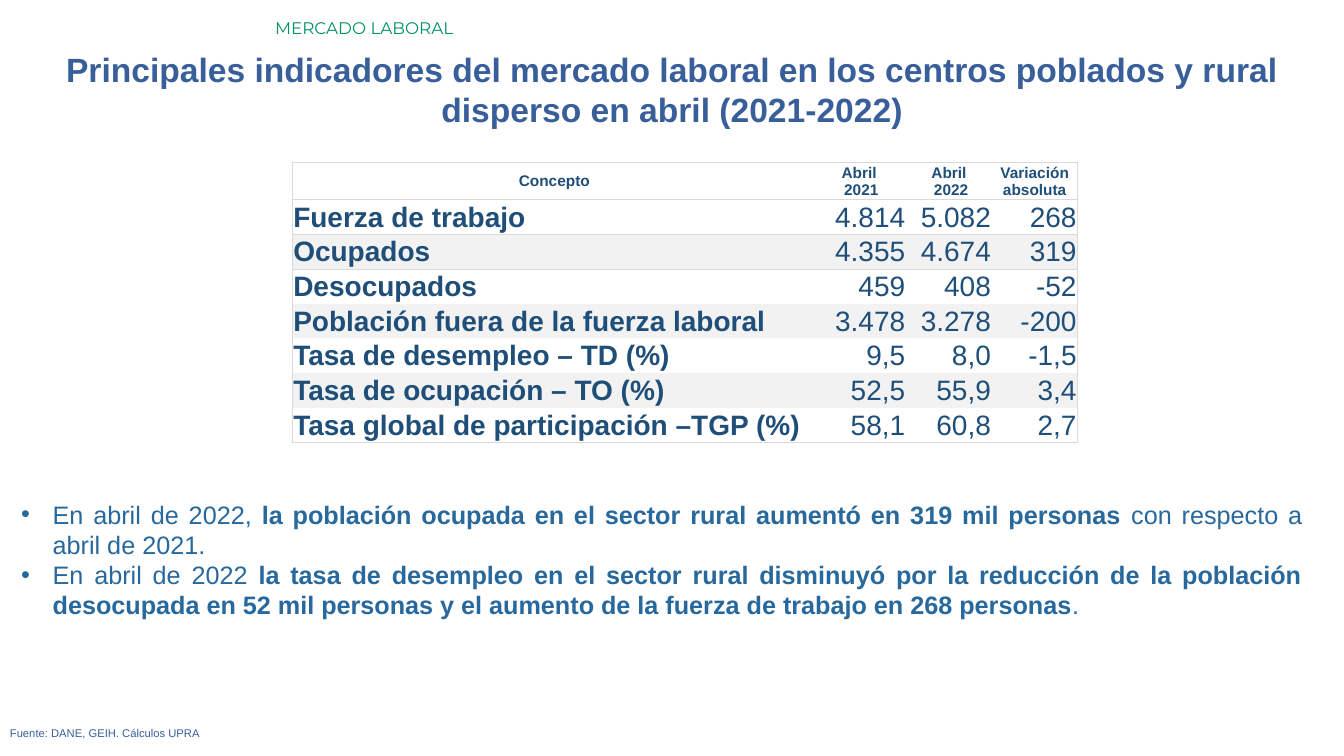
import lxml.etree
import pptx
import pptx.dml.color
import pptx.enum.text
import pptx.oxml
import pptx.oxml.ns
import pptx.util

Pt = pptx.util.Pt
Align = pptx.enum.text.PP_ALIGN
Anchor = pptx.enum.text.MSO_ANCHOR
qn = pptx.oxml.ns.qn

COLORS = {
    "green": "009267",
    "title": "395F9B",
    "body": "27689D",
    "table": "1F4E78",
    "border": "D9D9D9",
    "band": "F2F2F2",
    "white": "FFFFFF",
}


def write(paragraph, runs, color, size, alignment, font="Arial"):
    paragraph.alignment = alignment
    paragraph.space_before = Pt(0)
    for text, bold in runs:
        run = paragraph.add_run()
        run.text = text
        values = {"name": font, "size": Pt(size), "bold": bold}
        for name, value in values.items():
            setattr(run.font, name, value)
        run.font.color.rgb = pptx.dml.color.RGBColor.from_string(COLORS[color])


def place(shape, left, top, width, height, anchor=Anchor.TOP):
    position = {"left": left, "top": top, "width": width, "height": height}
    for name, value in position.items():
        setattr(shape, name, Pt(value))
    frame_format = {
        "word_wrap": True,
        "auto_size": pptx.enum.text.MSO_AUTO_SIZE.NONE,
        "vertical_anchor": anchor,
    }
    for name, value in frame_format.items():
        setattr(shape.text_frame, name, value)
    return shape.text_frame


presentation = pptx.Presentation()
presentation.slide_width = Pt(960)
presentation.slide_height = Pt(540)
slide = presentation.slides.add_slide(presentation.slide_layouts[1])

title = place(slide.shapes.title, 0, 31, 960, 65.5)
write(
    title.paragraphs[0],
    [("Principales indicadores del mercado laboral en los centros poblados y rural "
      "disperso en abril (2021-2022)", True)],
    "title", 24, Align.CENTER,
)

labels = [
    ("MERCADO LABORAL", (189.4, 9.4, 770.4, 21.6), "green", 12, Align.LEFT, "Montserrat"),
    ("Fuente: DANE, GEIH. Cálculos UPRA", (0, 515.5, 929.5, 17.3), "title", 8,
     Align.JUSTIFY, "Arial"),
]
for text, box, color, size, alignment, font in labels:
    label = place(slide.shapes.add_textbox(0, 0, 0, 0), *box)
    write(label.paragraphs[0], [(text, False)], color, size, alignment, font)

findings = [
    [
        ("En abril de 2022, ", False),
        ("la población ocupada en el sector rural aumentó en 319 mil personas ", True),
        ("con respecto a abril de 2021.", False),
    ],
    [
        ("En abril de 2022", False),
        (" la tasa de desempleo en el sector rural disminuyó por la reducción de la "
         "población desocupada en 52 mil personas y el aumento de la fuerza de trabajo "
         "en 268 personas", True),
        (".", False),
    ],
]
body = place(slide.placeholders[1], 7.9, 352.8, 929.5, 94.3)
for index, runs in enumerate(findings):
    paragraph = body.paragraphs[0] if index == 0 else body.add_paragraph()
    write(paragraph, runs, "body", 18, Align.JUSTIFY)
    properties = paragraph._p.get_or_add_pPr()
    properties.set("marL", str(Pt(22.5)))
    properties.set("indent", str(Pt(-22.5)))
    lxml.etree.SubElement(properties, qn("a:buFont"), typeface="Arial")
    lxml.etree.SubElement(properties, qn("a:buChar"), char="•")

rows = [
    ["Concepto", "Abril \n2021", "Abril\n 2022", "Variación absoluta"],
    ["Fuerza de trabajo", "4.814", "5.082", "268"],
    ["Ocupados", "4.355", "4.674", "319"],
    ["Desocupados", "459", "408", "-52"],
    ["Población fuera de la fuerza laboral", "3.478", "3.278", "-200"],
    ["Tasa de desempleo – TD (%)", "9,5", "8,0", "-1,5"],
    ["Tasa de ocupación – TO (%)", "52,5", "55,9", "3,4"],
    ["Tasa global de participación –TGP (%)", "58,1", "60,8", "2,7"],
]
column_widths = [374.4, 64.1, 61.2, 61.2]
header_height, row_height = 26.6, 24.8
last_row, last_column = len(rows) - 1, len(column_widths) - 1
table_frame = slide.shapes.add_table(
    len(rows), len(column_widths), Pt(208.8), Pt(115.9),
    Pt(sum(column_widths)), Pt(header_height + last_row * row_height),
)
table = table_frame.table
table.first_row = False
table.horz_banding = False
style = next(table_frame.element.iter(qn("a:tableStyleId")))
style.text = "{2D5ABB26-0587-4C30-8999-92F81FD0307C}"
for column, width in zip(table.columns, column_widths):
    column.width = Pt(width)

cell_format = {
    "margin_left": Pt(0.7),
    "margin_right": Pt(0.7),
    "margin_top": Pt(0.7),
    "margin_bottom": Pt(0),
    "vertical_anchor": Anchor.MIDDLE,
}
for row_index, row in enumerate(rows):
    header = row_index == 0
    table.rows[row_index].height = Pt(header_height if header else row_height)
    banded = not header and row_index % 2 == 0
    for column_index, text in enumerate(row):
        cell = table.cell(row_index, column_index)
        for name, value in cell_format.items():
            setattr(cell, name, value)
        first = column_index == 0
        alignment = Align.CENTER if header else Align.LEFT if first else Align.RIGHT
        for line_index, line in enumerate(text.split("\n")):
            frame = cell.text_frame
            paragraph = frame.paragraphs[0] if line_index == 0 else frame.add_paragraph()
            write(paragraph, [(line, header or first)], "table", 11 if header else 20, alignment)
        borders = {
            "a:lnL": first,
            "a:lnR": column_index == last_column,
            "a:lnT": row_index <= 2,
            "a:lnB": row_index <= 1 or row_index == last_row,
        }
        properties = cell._tc.get_or_add_tcPr()
        for tag, visible in borders.items():
            if visible:
                border = lxml.etree.SubElement(properties, qn(tag), w=str(Pt(0.5)))
                fill = lxml.etree.SubElement(border, qn("a:solidFill"))
                lxml.etree.SubElement(fill, qn("a:srgbClr"), val=COLORS["border"])
        cell.fill.solid()
        cell.fill.fore_color.rgb = pptx.dml.color.RGBColor.from_string(
            COLORS["band" if banded else "white"]
        )

presentation.save("out.pptx")
